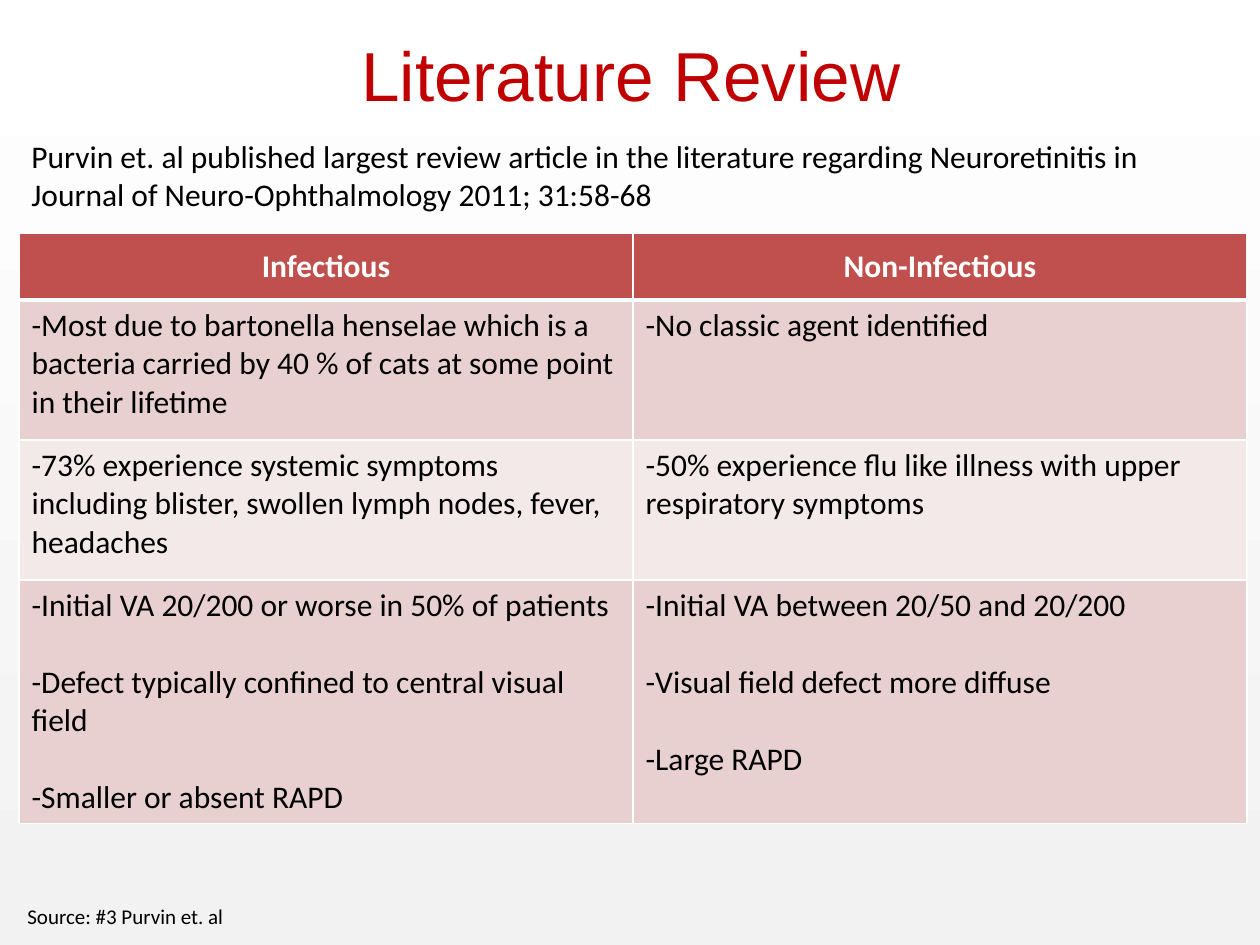
from lxml import etree
from pptx import Presentation
from pptx.dml.color import RGBColor
from pptx.enum.shapes import MSO_SHAPE
from pptx.enum.text import MSO_ANCHOR, PP_ALIGN
from pptx.oxml.ns import qn
from pptx.util import Emu, Pt

RECT = MSO_SHAPE.RECTANGLE
LEFT, CENTER = PP_ALIGN.LEFT, PP_ALIGN.CENTER
TOP, MIDDLE = MSO_ANCHOR.TOP, MSO_ANCHOR.MIDDLE

WIDE, HIGH = 1260, 945
HEAD = "C0504D"
BANDS = ["E8D0D0", "F4E9E9"]
HEIGHTS = [67, 140, 140, 243]
ROWS = [
    (["Infectious"], ["Non-Infectious"]),
    (["-Most due to bartonella henselae which is a bacteria carried by "
      "40 % of cats at some point in their lifetime"],
     ["-No classic agent identified"]),
    (["-73% experience systemic symptoms including blister, swollen "
      "lymph nodes, fever, headaches"],
     ["-50% experience flu like illness with upper respiratory symptoms"]),
    (["-Initial VA 20/200 or worse in 50% of patients",
      "-Defect typically confined to central visual field",
      "-Smaller or absent RAPD"],
     ["-Initial VA between 20/50 and 20/200",
      "-Visual field defect more diffuse",
      "-Large RAPD"]),
]


def px(n):
    return Emu(round(n * 914400 / 126))


def color(code):
    return RGBColor.from_string(code)


def write(frame, lines, size, code="000000", face="Calibri", bold=False,
          align=LEFT, gap=0):
    for i, line in enumerate(lines):
        para = frame.paragraphs[0] if i == 0 else frame.add_paragraph()
        para.text = line
        para.alignment = align
        if i:
            para.space_before = Pt(gap)
        font = para.font
        font.name, font.size, font.bold = face, Pt(size), bold
        font.color.rgb = color(code)


def add_text(slide, box, text, size, anchor=TOP, **style):
    frame = slide.shapes.add_textbox(*map(px, box)).text_frame
    frame.word_wrap = True
    frame.vertical_anchor = anchor
    write(frame, [text], size, **style)


def add_back(slide):
    back = slide.shapes.add_shape(RECT, 0, 0, px(WIDE), px(HIGH))
    back.shadow.inherit = False
    back.line.fill.background()
    back.fill.gradient()
    back.fill.gradient_angle = 90
    for stop, code in zip(back.fill.gradient_stops, ["F2F2F2", "FFFFFF"]):
        stop.color.rgb = color(code)


def set_edges(cell, widths):
    # Border lines must come before the fill in the cell properties
    props = cell._tc.get_or_add_tcPr()
    for i, (side, width) in enumerate(widths.items()):
        line = etree.Element(qn("a:ln" + side), w=str(Pt(width)))
        fill = etree.SubElement(line, qn("a:solidFill"))
        etree.SubElement(fill, qn("a:srgbClr"), val="FFFFFF")
        props.insert(i, line)


def add_grid(slide):
    box = map(px, (19, 233, 1228, sum(HEIGHTS)))
    table = slide.shapes.add_table(len(ROWS), 2, *box).table
    for r, (row, height) in enumerate(zip(ROWS, HEIGHTS)):
        table.rows[r].height = px(height)
        head = r == 0
        for c, lines in enumerate(row):
            cell = table.cell(r, c)
            cell.fill.solid()
            cell.fill.fore_color.rgb = color(HEAD if head else BANDS[(r - 1) % 2])
            cell.vertical_anchor = MIDDLE if head else TOP
            set_edges(cell, {"L": 1, "R": 1, "T": 3 if r == 1 else 1,
                             "B": 3 if head else 1})
            write(cell.text_frame, lines, 18, "FFFFFF" if head else "000000",
                  bold=head, align=CENTER if head else LEFT, gap=22)


def main():
    deck = Presentation()
    deck.slide_width, deck.slide_height = px(WIDE), px(HIGH)
    slide = deck.slides.add_slide(deck.slide_layouts[6])

    # Backdrop and comparison table
    add_back(slide)
    add_grid(slide)

    # Title, source and introduction
    add_text(slide, (15, 42, 1232, 63), "Literature Review", 39.6, MIDDLE,
             code="C00000", face="Arial", align=CENTER)
    add_text(slide, (15, 897, 630, 38), "Source: #3 Purvin et. al", 12)
    add_text(slide, (19, 131, 1228, 89),
             "Purvin et. al published largest review article in the literature "
             "regarding Neuroretinitis in Journal of Neuro-Ophthalmology 2011; "
             "31:58-68", 18)
    deck.save("out.pptx")


if __name__ == "__main__":
    main()
